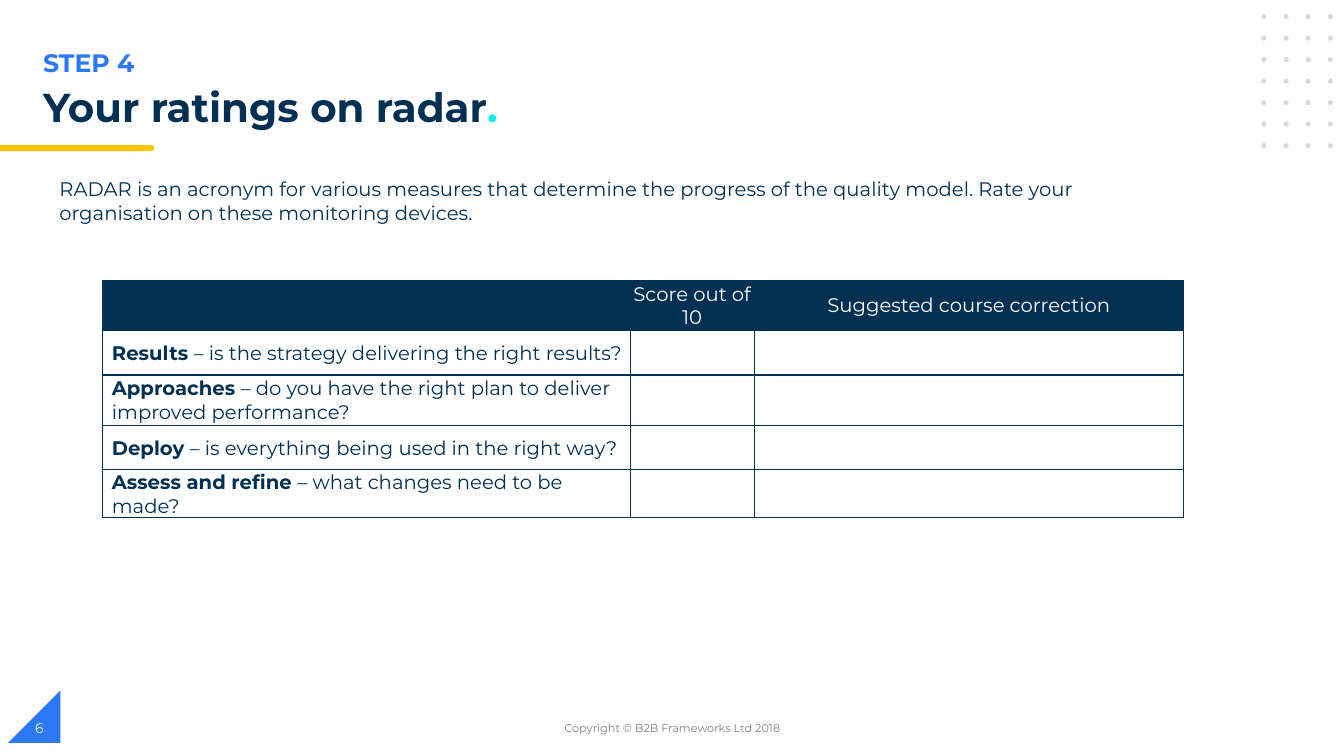
from lxml import etree
from pptx import Presentation
from pptx.dml.color import RGBColor
from pptx.enum.shapes import MSO_SHAPE
from pptx.enum.text import MSO_ANCHOR, PP_ALIGN
from pptx.oxml.ns import qn
from pptx.util import Inches, Pt

TRIANGLE, OVAL = MSO_SHAPE.RIGHT_TRIANGLE, MSO_SHAPE.OVAL
RECT, TERMINATOR = MSO_SHAPE.RECTANGLE, MSO_SHAPE.FLOWCHART_TERMINATOR
LEFT, CENTER = PP_ALIGN.LEFT, PP_ALIGN.CENTER
TOP, MIDDLE = MSO_ANCHOR.TOP, MSO_ANCHOR.MIDDLE
NAVY, BLUE, CYAN, YELLOW = "023053", "2B79F8", "0EECEC", "FFC600"
WHITE, GREY, DOT_GREY = "FFFFFF", "7F7F7F", "D1DBE0"

prs = Presentation()
prs.slide_width, prs.slide_height = Inches(13.33), Inches(7.5)
s = prs.slides.add_slide(prs.slide_layouts[6])


def add_filled(kind, x, y, w, h, color):
    sp = s.shapes.add_shape(kind, Inches(x), Inches(y), Inches(w), Inches(h))
    sp.shadow.inherit = False
    sp.fill.solid()
    sp.fill.fore_color.rgb = RGBColor.from_string(color)
    sp.line.fill.background()
    return sp


def write(tf, runs, size, align=LEFT, anchor=TOP):
    """Fill a text frame with one paragraph of (text, colour, bold) runs."""
    tf.word_wrap = True
    tf.vertical_anchor = anchor
    p = tf.paragraphs[0]
    p.alignment = align
    for text, color, bold in runs:
        r = p.add_run()
        r.text = text
        r.font.name, r.font.size, r.font.bold = "Montserrat", Pt(size), bold
        r.font.color.rgb = RGBColor.from_string(color)
    return p


# Corner triangle, dot grid and title underline
corner = add_filled(TRIANGLE, 0.08, 6.85, 0.52, 0.52, BLUE)
corner.element.spPr.xfrm.set("flipH", "1")
for row in range(7):
    for col in range(4):
        add_filled(OVAL, 12.51 + 0.22 * col, 0.14 + 1.28 / 6 * row, 0.05, 0.05, DOT_GREY)
add_filled(TERMINATOR, 1.34, 1.44, 0.19, 0.06, YELLOW)
add_filled(RECT, 0, 1.44, 1.41, 0.06, YELLOW)

# Headings, introduction and footer
intro = ("RADAR is an acronym for various measures that determine the progress of the "
         "quality model. Rate your organisation on these monitoring devices.")
texts = [
    (0.33, 0.42, 6.69, 0.4, [("STEP 4", BLUE, True)], 18, LEFT, TOP),
    (0.33, 0.82, 8.51, 0.56,
     [("Your ratings on radar", NAVY, True), (".", CYAN, True)], 28.8, LEFT, TOP),
    (0.49, 1.71, 11.34, 0.57, [(intro, NAVY, False)], 14, LEFT, TOP),
    (4.42, 7.02, 4.5, 0.4,
     [("Copyright © B2B Frameworks Ltd 2018", GREY, False)], 8, CENTER, MIDDLE),
    (0.25, 7.02, 3, 0.4, [("6", WHITE, False)], 10, LEFT, MIDDLE),
]
for x, y, w, h, runs, size, align, anchor in texts:
    box = s.shapes.add_textbox(Inches(x), Inches(y), Inches(w), Inches(h))
    p = write(box.text_frame, runs, size, align, anchor)
    if size == 28.8:
        p.line_spacing = 0.9

# Ratings table
headers = ["", "Score out of 10", "Suggested course correction"]
measures = [
    ("Results ", "– is the strategy delivering the right results?"),
    ("Approaches ", "– do you have the right plan to deliver improved performance?"),
    ("Deploy ", "– is everything being used in the right way?"),
    ("Assess and refine ", "– what changes need to be made?"),
]
widths = [5.23, 1.23, 4.26]
heights = [0.5, 0.44, 0.5, 0.44, 0.44]
table = s.shapes.add_table(len(heights), len(widths), Inches(1.02), Inches(2.78),
                           Inches(sum(widths)), Inches(sum(heights))).table
table.horz_banding = False
for column, width in zip(table.columns, widths):
    column.width = Inches(width)
for i, height in enumerate(heights):
    table.rows[i].height = Inches(height)
    for j in range(len(widths)):
        cell = table.cell(i, j)
        tcPr = cell._tc.get_or_add_tcPr()
        for side in ("a:lnL", "a:lnR", "a:lnT", "a:lnB"):
            ln = etree.SubElement(tcPr, qn(side), w=str(Pt(1)))
            fill = etree.SubElement(ln, qn("a:solidFill"))
            etree.SubElement(fill, qn("a:srgbClr"), val=NAVY)
        cell.margin_left = Inches(0.09 if j == 0 else 0.01)
        cell.margin_right = cell.margin_top = Inches(0.01)
        cell.margin_bottom = 0
        cell.vertical_anchor = MIDDLE
        if i == 0:
            cell.fill.solid()
            cell.fill.fore_color.rgb = RGBColor.from_string(NAVY)
        else:
            cell.fill.background()
        if i == 0 and headers[j]:
            write(cell.text_frame, [(headers[j], WHITE, False)], 14, CENTER, MIDDLE)
        elif i > 0 and j == 0:
            name, question = measures[i - 1]
            write(cell.text_frame, [(name, NAVY, True), (question, NAVY, False)],
                  14, LEFT, MIDDLE)

prs.save("out.pptx")
